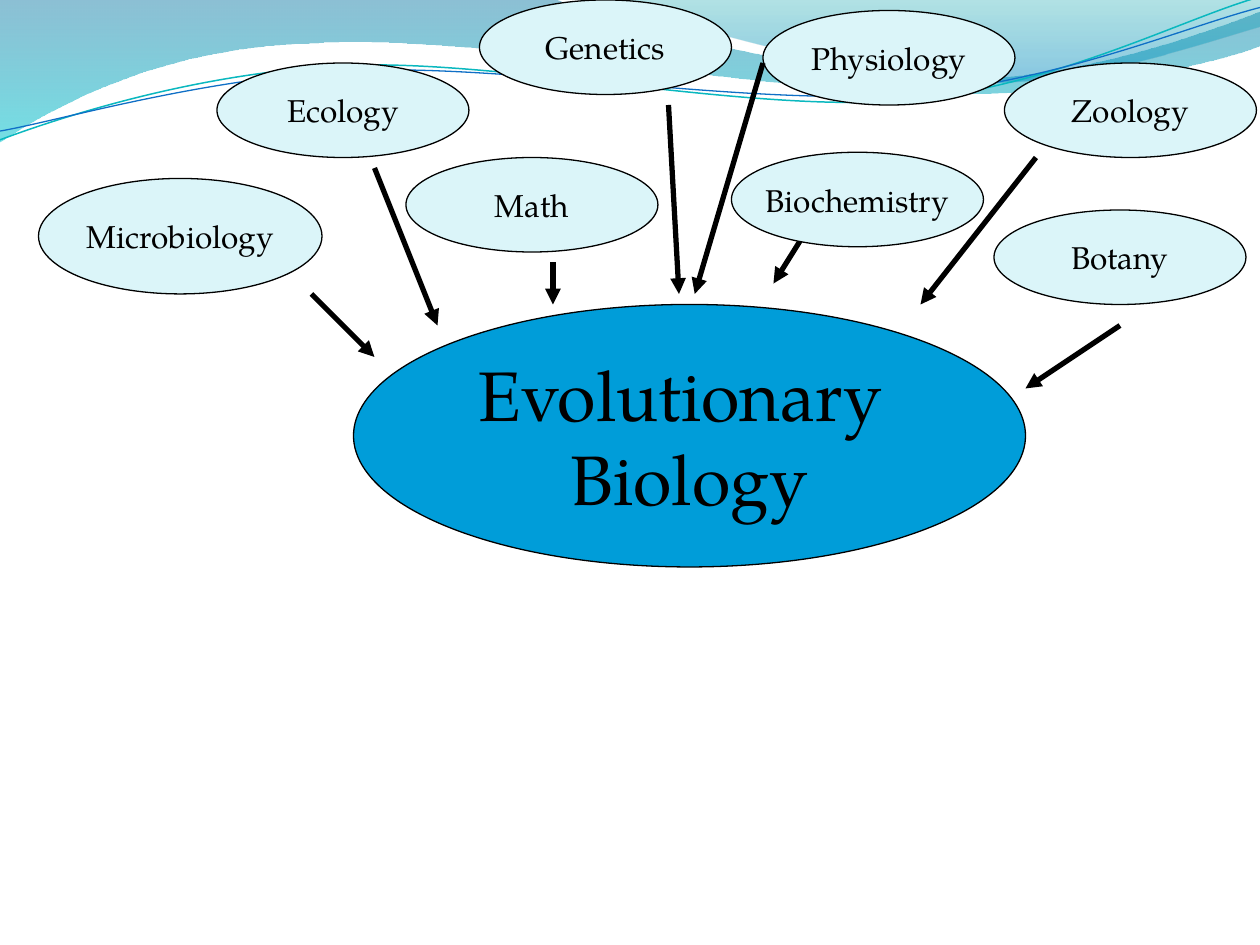
import math

from lxml import etree
from pptx import Presentation, util as u
from pptx.dml import color
from pptx.enum import shapes, text
from pptx.oxml import ns

Pt = u.Pt
FONT = "TeX Gyre Pagella"
TILT = 2.7

WAVES = [
    ([(0, 0), (316.8, -0.7),
      (342.7, 12.2, 478.1, 45.4, 545.8, 45.4),
      (614.2, 45.4, 689.8, 18.7, 720, 6.5), (720.7, 25.9),
      (707.8, 31.7, 626.4, 54.7, 537.1, 54),
      (447.8, 54, 275, 20.2, 185, 24.5),
      (92.9, 25.9, 33.1, 59.8, -0.7, 81.4), (0, 0)],
     [(0, "0074A1", 45), (1, "00C6CF", 55)]),
    ([(344.9, -0.7),
      (366.5, 7.9, 491, 44.6, 553.7, 46.8),
      (616.3, 49.7, 691.9, 23, 720, 15.1), (720, 0), (344.9, -0.7)],
     [(0, "00A1A9", 30), (0.8, "008BBF", 45)]),
]
CURVES = [
    ([(0, 79.9),
      (34.6, 67, 113.8, 41, 199.4, 37.4),
      (284.4, 33.8, 427, 64.1, 513.4, 57.6),
      (599.8, 51.1, 675.4, 10.8, 718.6, -1.4)],
     (359.3, 41.4), "0AB8BF", 0.85),
    ([(0, 74.9),
      (33.8, 69.1, 118.1, 43.9, 203.8, 40.3),
      (290.2, 36.7, 429.8, 60.5, 516.2, 54),
      (601.9, 48.2, 677.5, 15.1, 720, 4.3)],
     (359.6, 42.5), "0F6FC6", 0.75),
]
ARROWS = [
    (178, 168, 214, 204), (214, 96, 250, 186), (382, 60, 388, 168),
    (316, 150, 316, 174), (472, 114, 442, 162), (592, 90, 526, 174),
    (640, 186, 586, 222),
]
FRONT = (436, 36, 397, 168)
FIELDS = [
    ("Microbiology", 22, 102, 162, 66),
    ("Zoology", 574, 36, 144, 54),
    ("Ecology", 124, 36, 144, 54),
    ("Genetics", 274, 0, 144, 54),
    ("Physiology", 436, 6, 144, 54),
    ("Botany", 568, 120, 144, 54),
    ("Math", 232, 90, 144, 54),
    ("Biochemistry", 418, 87, 144, 54),
]


def rgb(code):
    return color.RGBColor.from_string(code)


def write(shape, lines, size=18, ink="000000", align=text.PP_ALIGN.CENTER):
    frame = shape.text_frame
    frame.word_wrap = False
    frame.vertical_anchor = text.MSO_ANCHOR.MIDDLE
    for i, line in enumerate(lines):
        para = frame.add_paragraph() if i else frame.paragraphs[0]
        para.alignment = align
        run = para.add_run()
        run.text = line
        run.font.size = Pt(size)
        run.font.name = FONT
        run.font.color.rgb = rgb(ink)


def pairs(step):
    return list(zip(step[::2], step[1::2]))


def turn(steps, mid):
    cos, sin = math.cos(math.radians(TILT)), math.sin(math.radians(TILT))
    turned = []
    for step in steps:
        spots = [(a - mid[0], b - mid[1]) for a, b in pairs(step)]
        turned.append([n for a, b in spots for n in
                       (mid[0] + a * cos - b * sin,
                        mid[1] + a * sin + b * cos)])
    return turned


def outline(slide, box, steps, close):
    x, y = box[:2]
    points = [(Pt(x + a), Pt(y + b)) for step in steps for a, b in pairs(step)]
    form = slide.shapes.build_freeform(*points[0])
    form.add_line_segments(points[1:], close=close)
    shape = form.convert_to_shape()
    shape.shadow.inherit = False
    lines = iter(list(shape._element.iter(ns.qn("a:lnTo"))))
    for step in steps[1:]:
        first = next(lines)
        if len(step) == 6:
            first.tag = ns.qn("a:cubicBezTo")
            for _ in range(2):
                extra = next(lines)
                first.append(extra[0])
                extra.getparent().remove(extra)
    return shape


def fade(shape, stops):
    shape.fill.gradient()
    shape.fill.gradient_angle = 270
    for stop, (place, code, _) in zip(shape.fill.gradient_stops, stops):
        stop.position = place
        stop.color.rgb = rgb(code)
    tints = shape.fill._xPr.iter(ns.qn("a:srgbClr"))
    for tint, (_, _, alpha) in zip(tints, stops):
        etree.SubElement(tint, ns.qn("a:alpha")).set("val", str(alpha * 1000))


def banner(slide, box):
    for steps, stops in WAVES:
        wave = outline(slide, box, steps, True)
        fade(wave, stops)
        wave.line.fill.background()
    for steps, mid, code, width in CURVES:
        curve = outline(slide, box, turn(steps, mid), False)
        curve.rotation = -TILT
        curve.fill.background()
        curve.line.color.rgb = rgb(code)
        curve.line.width = Pt(width)


def arrow(slide, box, ends):
    x, y = box[:2]
    a, b, c, d = ends
    line = slide.shapes.add_connector(
        shapes.MSO_CONNECTOR.STRAIGHT,
        Pt(x + a), Pt(y + b), Pt(x + c), Pt(y + d))
    line.line.color.rgb = rgb("000000")
    line.line.width = Pt(3)
    tip = etree.SubElement(line.line._get_or_add_ln(), ns.qn("a:tailEnd"))
    tip.set("type", "triangle")
    etree.SubElement(line._element.spPr, ns.qn("a:effectLst"))


def oval(slide, box, lines, fill, size):
    shape = slide.shapes.add_shape(
        shapes.MSO_SHAPE.OVAL, *[Pt(n) for n in box])
    shape.shadow.inherit = False
    shape.fill.solid()
    shape.fill.fore_color.rgb = rgb(fill)
    shape.line.color.rgb = rgb("000000")
    shape.line.width = Pt(0.75)
    write(shape, lines, size=size)


def web(slide, box):
    x, y = box[:2]
    for ends in ARROWS:
        arrow(slide, box, ends)
    oval(slide, (x + 202, y + 174, 384, 150),
         ["Evolutionary ", "Biology"], "009DD9", 40)
    for name, a, b, w, h in FIELDS:
        oval(slide, (x + a, y + b, w, h), [name], "DBF5F9", 18)
    arrow(slide, box, FRONT)


def main():
    deck = Presentation()
    deck.slide_width, deck.slide_height = Pt(720), Pt(540)
    slide = deck.slides.add_slide(deck.slide_layouts[6])
    banner(slide, (0, 0, 720, 82))
    web(slide, (0, 0, 720, 324))
    deck.save("out.pptx")


if __name__ == "__main__":
    main()
